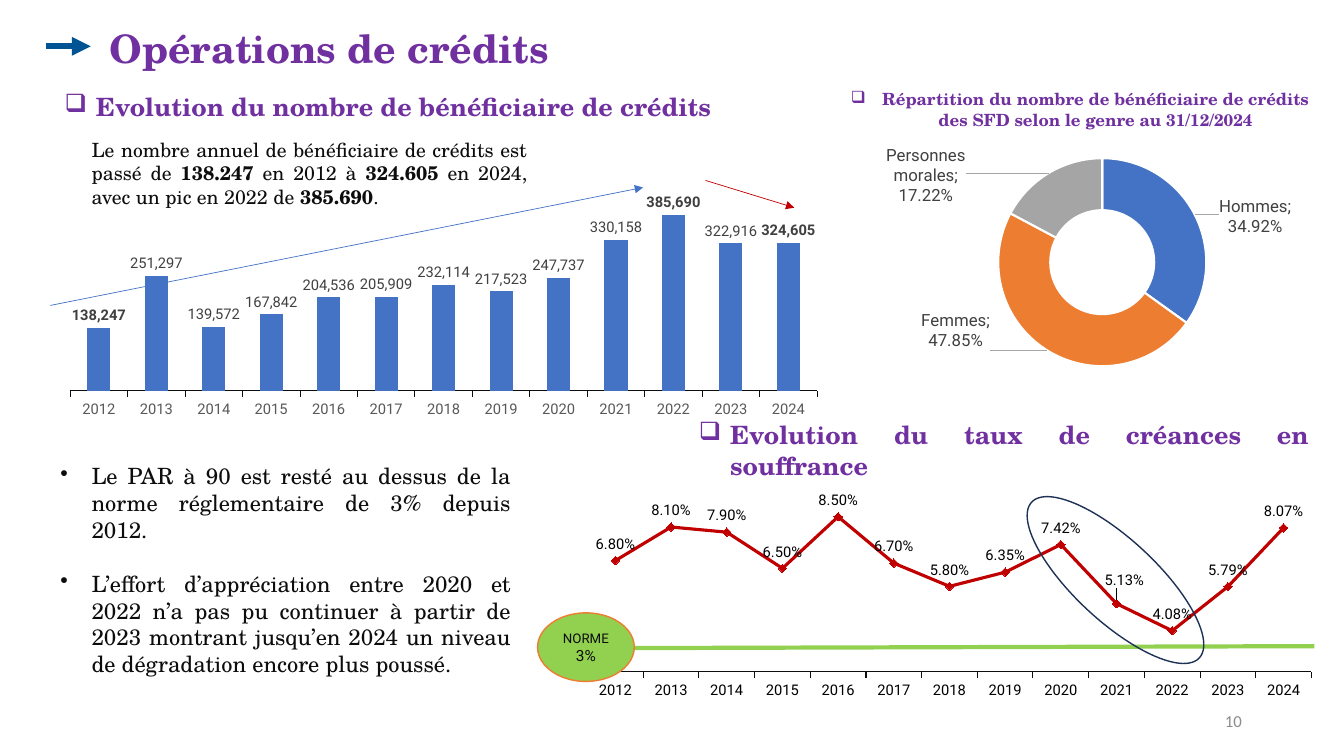
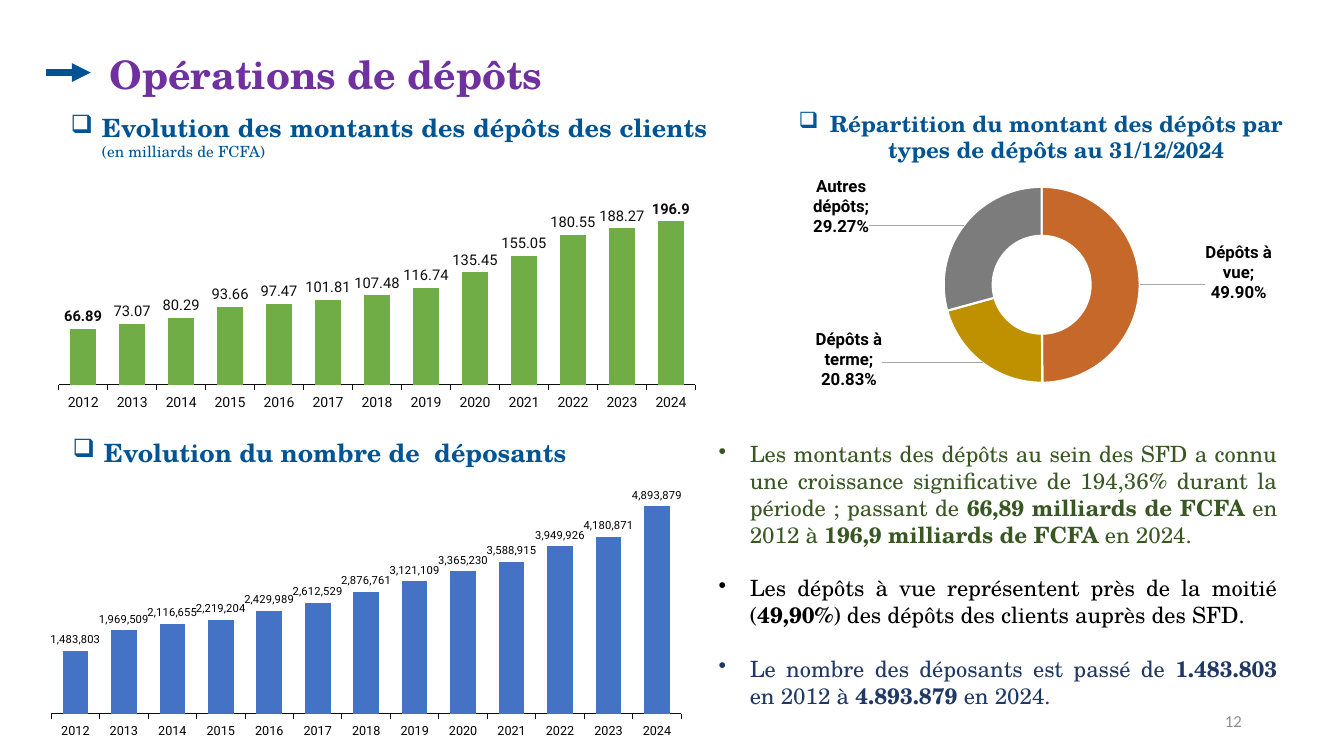
"""Build two slides on the credits and deposits of microfinance institutions."""
from copy import deepcopy
from dataclasses import dataclass, field
from typing import NamedTuple

from lxml import etree
from pptx import Presentation
from pptx.chart.data import CategoryChartData
from pptx.dml.color import RGBColor
from pptx.enum.chart import XL_CHART_TYPE, XL_LABEL_POSITION, XL_MARKER_STYLE, XL_TICK_MARK
from pptx.enum.shapes import MSO_CONNECTOR, MSO_SHAPE
from pptx.enum.text import MSO_ANCHOR, PP_ALIGN
from pptx.oxml.ns import qn
from pptx.util import Emu, Inches, Pt

COLUMN, LINE, DOUGHNUT = XL_CHART_TYPE.COLUMN_CLUSTERED, XL_CHART_TYPE.LINE_MARKERS, XL_CHART_TYPE.DOUGHNUT
OUTSIDE_END, ABOVE = XL_LABEL_POSITION.OUTSIDE_END, XL_LABEL_POSITION.ABOVE
TICK_OUTSIDE, TICK_NONE, DIAMOND = XL_TICK_MARK.OUTSIDE, XL_TICK_MARK.NONE, XL_MARKER_STYLE.DIAMOND
LEFT, CENTER, RIGHT, JUSTIFY = PP_ALIGN.LEFT, PP_ALIGN.CENTER, PP_ALIGN.RIGHT, PP_ALIGN.JUSTIFY
TOP, MIDDLE = MSO_ANCHOR.TOP, MSO_ANCHOR.MIDDLE
ROUNDED, OVAL, STRAIGHT = MSO_SHAPE.ROUNDED_RECTANGLE, MSO_SHAPE.OVAL, MSO_CONNECTOR.STRAIGHT
WIDTH, HEIGHT = Inches(13.333), Inches(7.5)
YEARS = tuple(str(year) for year in range(2012, 2025))
SQUARE, DOT = "❑", "•"


@dataclass(frozen=True)
class Theme:
    """Fonts, colours and type sizes shared by the slides."""
    serif: str = "TeX Gyre Schola"
    sans: str = "Roboto"
    number_font: str = "Calibri"
    purple: str = "7030A0"
    navy: str = "005493"
    ink: str = "0D0D0D"
    black: str = "000000"
    white: str = "FFFFFF"
    gray: str = "8C8C8C"
    label_gray: str = "404040"
    axis_gray: str = "595959"
    leader: str = "A6A6A6"
    blue: str = "4472C4"
    orange: str = "ED7D31"
    silver: str = "A5A5A5"
    red: str = "C00000"
    lime: str = "92D050"
    green: str = "70AD47"
    rust: str = "C56829"
    gold: str = "BF9000"
    steel: str = "7C7C7C"
    outline: str = "1E3256"
    forest: str = "385723"
    midnight: str = "203864"
    title: float = 28
    heading: float = 18
    body: float = 16
    intro: float = 14
    small: float = 12
    note: float = 11
    label: float = 10.5
    axis: float = 10
    badge: float = 9.5
    tiny_axis: float = 9
    tiny: float = 8


THEME = Theme()


class Point(NamedTuple):
    """A place in percent of the slide's size."""
    x: float
    y: float


class Box(NamedTuple):
    """A rectangle in percent of the slide's size."""
    left: float
    top: float
    width: float
    height: float


@dataclass(frozen=True)
class Paragraph:
    """A paragraph whose parts between double asterisks are bold."""
    text: str
    size: float = THEME.body
    color: str = THEME.ink
    bold: bool = False
    align: PP_ALIGN = JUSTIFY
    bullet: str = ""
    font: str = THEME.serif
    space_before: float = 0
    note: str = ""


@dataclass(frozen=True)
class Graph:
    """A one-series chart; plot and label offsets are shares of its box."""
    box: Box
    kind: XL_CHART_TYPE
    values: tuple[float, ...]
    colors: tuple[str, ...]
    plot: Box
    number_format: str
    categories: tuple[str, ...] = YEARS
    minimum: float = 0
    maximum: float = 0
    gap: int = 150
    axis_size: float = THEME.label
    axis_color: str = THEME.black
    label_size: float = THEME.label
    label_color: str = THEME.black
    label_bold: bool = False
    bold_points: tuple[int, ...] = ()
    offsets: dict[int, Point] = field(default_factory=dict)


def rgb(color: str) -> RGBColor:
    """Turn a hexadecimal colour into an RGBColor."""
    return RGBColor.from_string(color)


def across(share: float) -> Emu:
    """Convert a share of the slide's width."""
    return Emu(round(WIDTH * share / 100))


def down(share: float) -> Emu:
    """Convert a share of the slide's height."""
    return Emu(round(HEIGHT * share / 100))


def place(box: Box) -> tuple[Emu, Emu, Emu, Emu]:
    """Convert a box to lengths."""
    return across(box.left), down(box.top), across(box.width), down(box.height)


def style_font(font, name: str, size: float, color: str, bold: bool = False) -> None:
    """Set the face, size, colour and weight of a font."""
    font.name, font.size, font.bold = name, Pt(size), bold
    font.color.rgb = rgb(color)


def write_text(frame, paragraphs: list[Paragraph], anchor: MSO_ANCHOR) -> None:
    """Fill a text frame with paragraphs."""
    frame.word_wrap, frame.vertical_anchor = True, anchor
    for index, content in enumerate(paragraphs):
        paragraph = frame.add_paragraph() if index else frame.paragraphs[0]
        paragraph.alignment = content.align
        paragraph.space_before = Pt(content.space_before)
        style_font(paragraph.font, content.font, content.size, content.color, content.bold)
        if content.bullet:
            properties = paragraph._p.get_or_add_pPr()
            properties.set("marL", str(Inches(0.31)))
            properties.set("indent", str(-Inches(0.31)))
            bullet = etree.Element(qn("a:buChar"), char=content.bullet)
            properties.find(qn("a:defRPr")).addprevious(bullet)
        for position, part in enumerate(content.text.split("**")):
            run = paragraph.add_run()
            run.text = part
            if position % 2:
                run.font.bold = True
        if content.note:
            run = paragraph.add_run()
            run.text, run.font.size, run.font.bold = content.note, Pt(THEME.note), False


def add_text(slide, box: Box, paragraphs: list[Paragraph], anchor: MSO_ANCHOR = MIDDLE) -> None:
    """Add a text box."""
    write_text(slide.shapes.add_textbox(*place(box)).text_frame, paragraphs, anchor)


def add_outline(slide, kind: MSO_SHAPE, box: Box, fill: str = "", line: str = ""):
    """Add a preset shape with an optional fill and line."""
    shape = slide.shapes.add_shape(kind, *place(box))
    shape.shadow.inherit = False
    for style, color in ((shape.fill, fill), (shape.line.fill, line)):
        if color:
            style.solid()
            style.fore_color.rgb = rgb(color)
        else:
            style.background()
    if line:
        shape.line.width = Pt(1)
    return shape


def add_heading(slide, box: Box, text: str, color: str, size: float = THEME.heading,
                align: PP_ALIGN = JUSTIFY, note: str = "") -> None:
    """Add a section heading with a square bullet."""
    shape = add_outline(slide, ROUNDED, box)
    write_text(shape.text_frame, [Paragraph(text, size, color, True, align, SQUARE, note=note)], MIDDLE)


def add_line(slide, start: Point, end: Point, color: str, width: float, arrow: bool = True) -> None:
    """Add a straight line, with an arrowhead unless told otherwise."""
    connector = slide.shapes.add_connector(STRAIGHT, across(start.x), down(start.y), across(end.x), down(end.y))
    connector.line.color.rgb, connector.line.width = rgb(color), Pt(width)
    properties = connector.element.spPr
    if arrow:
        etree.SubElement(properties.find(qn("a:ln")), qn("a:tailEnd"), type="triangle")
    etree.SubElement(properties, qn("a:effectLst"))


def make_layout(**settings: object) -> etree.Element:
    """Make a manual chart layout."""
    layout = etree.Element(qn("c:layout"))
    manual = etree.SubElement(layout, qn("c:manualLayout"))
    for name, value in settings.items():
        etree.SubElement(manual, qn(f"c:{name}"), val=str(value))
    return layout


def label_points(chart, series, graph: Graph) -> None:
    """Label the series, then move or embolden single labels."""
    labels = series.data_labels
    labels.show_value = True
    labels.number_format, labels.number_format_is_linked = graph.number_format, False
    style_font(labels.font, THEME.sans, graph.label_size, graph.label_color, graph.label_bold)
    element = chart.element.find(".//" + qn("c:dLbls"))
    leader_switch = element.find(qn("c:showLeaderLines"))
    if leader_switch is not None:
        element.remove(leader_switch)
    if graph.kind == DOUGHNUT:
        labels.show_category_name = True
        etree.SubElement(element, qn("c:separator")).text = "; "
    else:
        labels.position = ABOVE if graph.kind == LINE else OUTSIDE_END
    shared = list(element)
    for order, index in enumerate(sorted({*graph.bold_points, *graph.offsets})):
        label = etree.Element(qn("c:dLbl"))
        etree.SubElement(label, qn("c:idx"), val=str(index))
        if index in graph.offsets:
            offset = graph.offsets[index]
            label.append(make_layout(x=offset.x, y=offset.y))
        label.extend(deepcopy(part) for part in shared)
        if index in graph.bold_points:
            label.find(".//" + qn("a:defRPr")).set("b", "1")
        element.insert(order, label)
    if graph.kind == DOUGHNUT:
        etree.SubElement(element, qn("c:showLeaderLines"), val="1")
        leaders = etree.SubElement(element, qn("c:leaderLines"))
        line = etree.SubElement(etree.SubElement(leaders, qn("c:spPr")), qn("a:ln"), w=str(Pt(0.75)))
        fill = etree.SubElement(line, qn("a:solidFill"))
        etree.SubElement(fill, qn("a:srgbClr"), val=THEME.leader)


def add_graph(slide, graph: Graph) -> None:
    """Add a column, line or doughnut chart."""
    data = CategoryChartData(number_format=graph.number_format)
    data.categories = graph.categories
    data.add_series("Series 1", graph.values)
    chart = slide.shapes.add_chart(graph.kind, *place(graph.box), data).chart
    chart.has_title = chart.has_legend = False
    style_font(chart.font, THEME.sans, THEME.axis, THEME.black)
    plot, series = chart.plots[0], chart.plots[0].series[0]
    plot.vary_by_categories = graph.kind == DOUGHNUT
    area = chart.element.find(".//" + qn("c:plotArea"))
    for layout in area.findall(qn("c:layout")):
        area.remove(layout)
    left, top, width, height = graph.plot
    area.insert(0, make_layout(layoutTarget="inner", xMode="edge", yMode="edge", x=left, y=top, w=width, h=height))
    if graph.kind == DOUGHNUT:
        for index, color in enumerate(graph.colors):
            style = series.points[index].format
            style.fill.solid()
            style.fill.fore_color.rgb = rgb(color)
            style.line.color.rgb, style.line.width = rgb(THEME.white), Pt(1.5)
    else:
        color = rgb(graph.colors[0])
        values, years = chart.value_axis, chart.category_axis
        values.has_major_gridlines = values.visible = False
        values.minimum_scale, values.maximum_scale = graph.minimum, graph.maximum
        years.major_tick_mark, years.minor_tick_mark = TICK_OUTSIDE, TICK_NONE
        years.format.line.color.rgb, years.format.line.width = rgb(THEME.ink), Pt(0.75)
        style_font(years.tick_labels.font, THEME.sans, graph.axis_size, graph.axis_color)
        if graph.kind == LINE:
            series.smooth = False
            series.format.line.color.rgb, series.format.line.width = color, Pt(2.25)
            series.marker.style, series.marker.size = DIAMOND, 6
            series.marker.format.line.color.rgb = color
            filled = series.marker.format.fill
        else:
            plot.gap_width = graph.gap
            filled = series.format.fill
        filled.solid()
        filled.fore_color.rgb = color
    label_points(chart, series, graph)


def start_slide(presentation, title: str, top: float, number: int):
    """Add a blank slide with its title, arrow and number."""
    slide = presentation.slides.add_slide(presentation.slide_layouts[6])
    add_text(slide, Box(7.43, top, 38.6, 7.6), [Paragraph(title, THEME.title, THEME.purple, True, LEFT)], TOP)
    add_line(slide, Point(3.45, top + 3.6), Point(6.75, top + 3.6), THEME.navy, 4.5)
    add_text(slide, Box(70.65, 92.67, 22.5, 5.33),
             [Paragraph(str(number), THEME.small, THEME.gray, align=RIGHT, font=THEME.number_font)])
    return slide


def build_credits(presentation) -> None:
    """Build the slide on credits."""
    slide = start_slide(presentation, "Opérations de crédits", 2.53, 10)
    add_graph(slide, Graph(
        Box(4.65, 23.87, 57.3, 32), COLUMN,
        (138247, 251297, 139572, 167842, 204536, 205909, 232114, 217523, 247737, 330158, 385690, 322916, 324605),
        (THEME.blue,), Box(0.01, 0.02, 0.97, 0.85), "#,##0", maximum=450000,
        axis_color=THEME.axis_gray, label_color=THEME.label_gray, bold_points=(0, 10, 12)))
    add_heading(slide, Box(3.9, 10.8, 50.1, 6.53), "Evolution du nombre de bénéficiaire de crédits", THEME.purple)
    add_graph(slide, Graph(
        Box(42, 60.8, 57.3, 31.87), LINE,
        (0.068, 0.081, 0.079, 0.065, 0.085, 0.067, 0.058, 0.0635, 0.0742, 0.0513, 0.0408, 0.0579, 0.0807),
        (THEME.red,), Box(0.03, 0.13, 0.94, 0.75), "0.00%", minimum=0.025, maximum=0.095,
        offsets={9: Point(0.01, -0.03)}))
    add_line(slide, Point(46.58, 85.73), Point(97.8, 85.47), THEME.lime, 3, arrow=False)
    badge = add_outline(slide, OVAL, Box(40, 81.07, 7.2, 9.07), THEME.lime, THEME.orange).text_frame
    badge.margin_left = badge.margin_right = 0
    write_text(badge, [Paragraph(text, size, align=CENTER, font=THEME.sans)
                       for text, size in (("NORME", THEME.badge), ("3%", THEME.note))], MIDDLE)
    add_heading(slide, Box(51, 54.8, 47.4, 9.47), "Evolution du taux de créances en souffrance", THEME.purple)
    add_text(slide, Box(6.08, 17.07, 33.9, 11.6), [Paragraph(
        "Le nombre annuel de bénéficiaire de crédits est passé de **138.247** en 2012 à **324.605** en 2024, "
        "avec un pic en 2022 de **385.690**.", THEME.intro)])
    add_text(slide, Box(3.75, 60.53, 35, 31.87), [
        Paragraph("Le PAR à 90 est resté au dessus de la norme réglementaire de 3% depuis 2012.", bullet=DOT),
        Paragraph("L’effort d’appréciation entre 2020 et 2022 n’a pas pu continuer à partir de 2023 montrant "
                  "jusqu’en 2024 un niveau de dégradation encore plus poussé.", bullet=DOT, space_before=19)], TOP)
    add_graph(slide, Graph(
        Box(63.38, 19.33, 32.7, 32), DOUGHNUT, (0.3492, 0.4785, 0.1722),
        (THEME.blue, THEME.orange, THEME.silver), Box(0.31, 0.05, 0.52, 0.86), "0.00%",
        ("Hommes", "Femmes", "Personnes morales"), label_size=THEME.small, label_color=THEME.label_gray,
        offsets={0: Point(0.19, -0.04), 1: Point(-0.24, 0.01), 2: Point(-0.31, -0.08)}))
    add_heading(slide, Box(62.03, 11.2, 36.68, 6.53),
                "Répartition du nombre de bénéficiaire de crédits des SFD selon le genre au 31/12/2024",
                THEME.purple, THEME.small, CENTER)
    add_line(slide, Point(3.75, 40.4), Point(47.85, 24.8), THEME.blue, 0.5)
    add_line(slide, Point(52.5, 23.87), Point(59.1, 27.47), THEME.red, 0.5)
    add_outline(slide, OVAL, Box(74.48, 71.33, 17.03, 10.8), line=THEME.outline).rotation = 42.9


def build_deposits(presentation) -> None:
    """Build the slide on deposits."""
    slide = start_slide(presentation, "Opérations de dépôts", 6, 12)
    add_graph(slide, Graph(
        Box(3.38, 21.07, 49.35, 33.87), COLUMN,
        (66.89, 73.07, 80.29, 93.66, 97.47, 101.81, 107.48, 116.74, 135.45, 155.05, 180.55, 188.27, 196.9),
        (THEME.green,), Box(0.02, 0.07, 0.96, 0.81), "General", maximum=250, gap=85,
        axis_size=THEME.axis, axis_color=THEME.ink, label_color=THEME.ink, bold_points=(0, 12)))
    add_heading(slide, Box(4.35, 14.8, 49.2, 6.53), "Evolution des montants des dépôts des clients ",
                THEME.navy, note="(en milliards de FCFA)")
    add_graph(slide, Graph(
        Box(54.75, 19.6, 45.98, 32), DOUGHNUT, (0.499, 0.2083, 0.2927),
        (THEME.rust, THEME.gold, THEME.steel), Box(0.33, 0.16, 0.33, 0.81), "0.00%",
        ("Dépôts à vue", "Dépôts à terme", "Autres dépôts"), label_size=THEME.small, label_bold=True,
        offsets={0: Point(0.2, -0.05), 1: Point(-0.24, 0.07), 2: Point(-0.23, -0.14)}))
    add_heading(slide, Box(58.2, 14.8, 38.48, 6.53),
                "Répartition du montant des dépôts par types de dépôts au 31/12/2024", THEME.navy, THEME.body, CENTER)
    add_text(slide, Box(52.73, 57.6, 43.05, 36), [
        Paragraph("Les montants des dépôts au sein des SFD a connu une croissance significative de 194,36% durant la "
                  "période ; passant de **66,89 milliards de FCFA** en 2012 à **196,9 milliards de FCFA** en 2024.",
                  color=THEME.forest, bullet=DOT),
        Paragraph("Les dépôts à vue représentent près de la moitié (**49,90%**) des dépôts des clients auprès "
                  "des SFD.", color=THEME.black, bullet=DOT, space_before=19),
        Paragraph("Le nombre des déposants est passé de **1.483.803** en 2012 à **4.893.879** en 2024.",
                  color=THEME.midnight, bullet=DOT, space_before=19)], TOP)
    add_heading(slide, Box(4.5, 56.53, 40.43, 6.53), "Evolution du nombre de  déposants", THEME.navy)
    add_graph(slide, Graph(
        Box(2.33, 58, 49.35, 40), COLUMN,
        (1483803, 1969509, 2116655, 2219204, 2429989, 2612529, 2876761, 3121109, 3365230, 3588915, 3949926,
         4180871, 4893879),
        (THEME.blue,), Box(0.03, 0.07, 0.95, 0.84), "#,##0", maximum=6000000, gap=89,
        axis_size=THEME.tiny_axis, label_size=THEME.tiny))


def main() -> None:
    """Build and save the presentation."""
    presentation = Presentation()
    presentation.slide_width, presentation.slide_height = WIDTH, HEIGHT
    build_credits(presentation)
    build_deposits(presentation)
    presentation.save("out.pptx")


if __name__ == "__main__":
    main()
